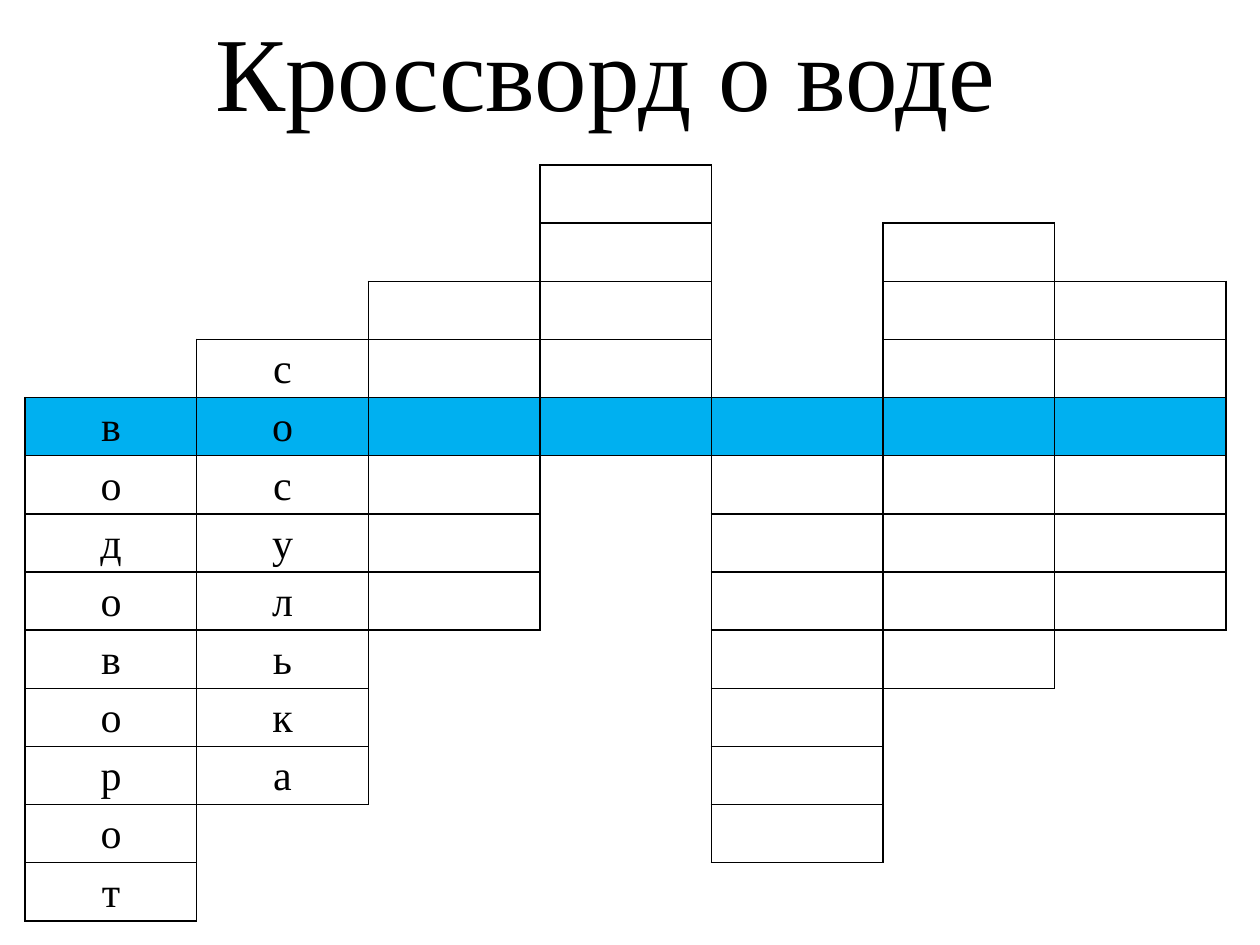
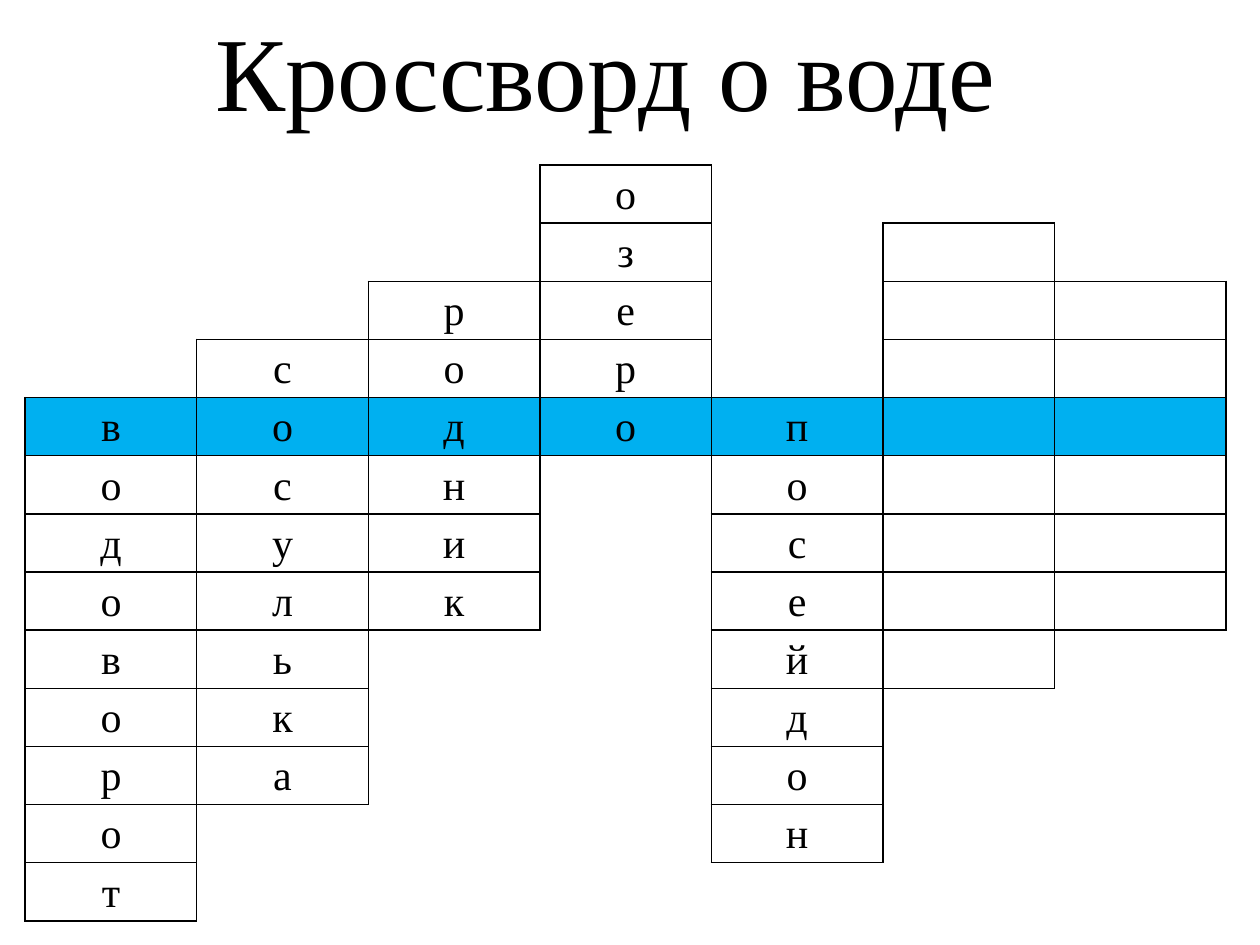
from dataclasses import dataclass

from lxml.etree import SubElement
from pptx import Presentation
from pptx.dml.color import RGBColor
from pptx.enum.text import MSO_ANCHOR, MSO_AUTO_SIZE, PP_ALIGN
from pptx.oxml.ns import qn
from pptx.slide import Slide
from pptx.table import _Cell
from pptx.util import Inches, Pt

BLACK = RGBColor(0, 0, 0)
KEYWORD_BLUE = RGBColor(0x00, 0xB0, 0xF0)
FONT = "Times New Roman"
TITLE = "Кроссворд о воде"
ROW_COUNT = 13
KEYWORD_ROW = 4
TABLE_WIDTH = 9.53
TABLE_HEIGHT = 6.0

# Border tags in schema order, each with the row and column step to the neighbour
EDGES = {"a:lnL": (0, -1), "a:lnR": (0, 1), "a:lnT": (-1, 0), "a:lnB": (1, 0)}


@dataclass(frozen=True)
class Entry:
    """One vertical answer; an unsolved one has no word."""
    first_row: int
    length: int
    word: str = ""

    def covers(self, row: int) -> bool:
        return self.first_row <= row < self.first_row + self.length

    def letter(self, row: int) -> str:
        return self.word[row - self.first_row] if self.word and self.covers(row) else ""


ENTRIES = [
    Entry(4, 9, "водоворот"),
    Entry(3, 8, "сосулька"),
    Entry(2, 6, "родник"),
    Entry(0, 5, "озеро"),
    Entry(4, 8, "посейдон"),
    Entry(1, 8),
    Entry(2, 6),
]
SOLVED_COUNTS = [2, 5]


def in_grid(row: int, column: int) -> bool:
    return 0 <= column < len(ENTRIES) and ENTRIES[column].covers(row)


def draw_borders(cell: _Cell, row: int, column: int) -> None:
    """Line every edge that touches a crossword square, hide the others."""
    properties = cell._tc.get_or_add_tcPr()
    for tag, (row_step, column_step) in EDGES.items():
        line = SubElement(properties, qn(tag), w=str(Pt(1)))
        if in_grid(row, column) or in_grid(row + row_step, column + column_step):
            fill = SubElement(line, qn("a:solidFill"))
            SubElement(fill, qn("a:srgbClr"), val=str(BLACK))
        else:
            SubElement(line, qn("a:noFill"))


def write_letter(cell: _Cell, letter: str) -> None:
    cell.margin_left = cell.margin_right = Inches(0.07)
    cell.margin_top = cell.margin_bottom = 0
    para = cell.text_frame.paragraphs[0]
    para.text = letter
    para.alignment = PP_ALIGN.CENTER
    para.line_spacing = 1.15
    para.font.name = FONT
    para.font.size = Pt(24)
    para.font.color.rgb = BLACK


def add_crossword(page: Slide, solved: int) -> None:
    table = page.shapes.add_table(
        ROW_COUNT, len(ENTRIES), Inches(0.2), Inches(1.31),
        Inches(TABLE_WIDTH), Inches(TABLE_HEIGHT)).table
    table.first_row = table.horz_banding = False
    for table_column in table.columns:
        table_column.width = Inches(TABLE_WIDTH / len(ENTRIES))
    for table_row in table.rows:
        table_row.height = Inches(TABLE_HEIGHT / ROW_COUNT)

    for column, entry in enumerate(ENTRIES):
        for row in range(ROW_COUNT):
            cell = table.cell(row, column)
            write_letter(cell, entry.letter(row) if column < solved else "")
            draw_borders(cell, row, column)
            if row == KEYWORD_ROW:
                cell.fill.solid()
                cell.fill.fore_color.rgb = KEYWORD_BLUE
            else:
                cell.fill.background()


def set_title(page: Slide) -> None:
    box = page.shapes.title
    box.left, box.top = Inches(1.61), Inches(0)
    box.width, box.height = Inches(6.69), Inches(1.11)
    frame = box.text_frame
    frame.word_wrap = False
    frame.auto_size = MSO_AUTO_SIZE.SHAPE_TO_FIT_TEXT
    frame.vertical_anchor = MSO_ANCHOR.MIDDLE
    para = frame.paragraphs[0]
    para.text = TITLE
    para.alignment = PP_ALIGN.LEFT
    para.font.name = FONT
    para.font.size = Pt(60)
    para.font.color.rgb = BLACK


def main() -> None:
    deck = Presentation()
    deck.slide_width, deck.slide_height = Inches(10), Inches(7.5)
    title_only = deck.slide_layouts[5]
    for solved in SOLVED_COUNTS:
        page = deck.slides.add_slide(title_only)
        set_title(page)
        add_crossword(page, solved)
    deck.save("out.pptx")


if __name__ == "__main__":
    main()
